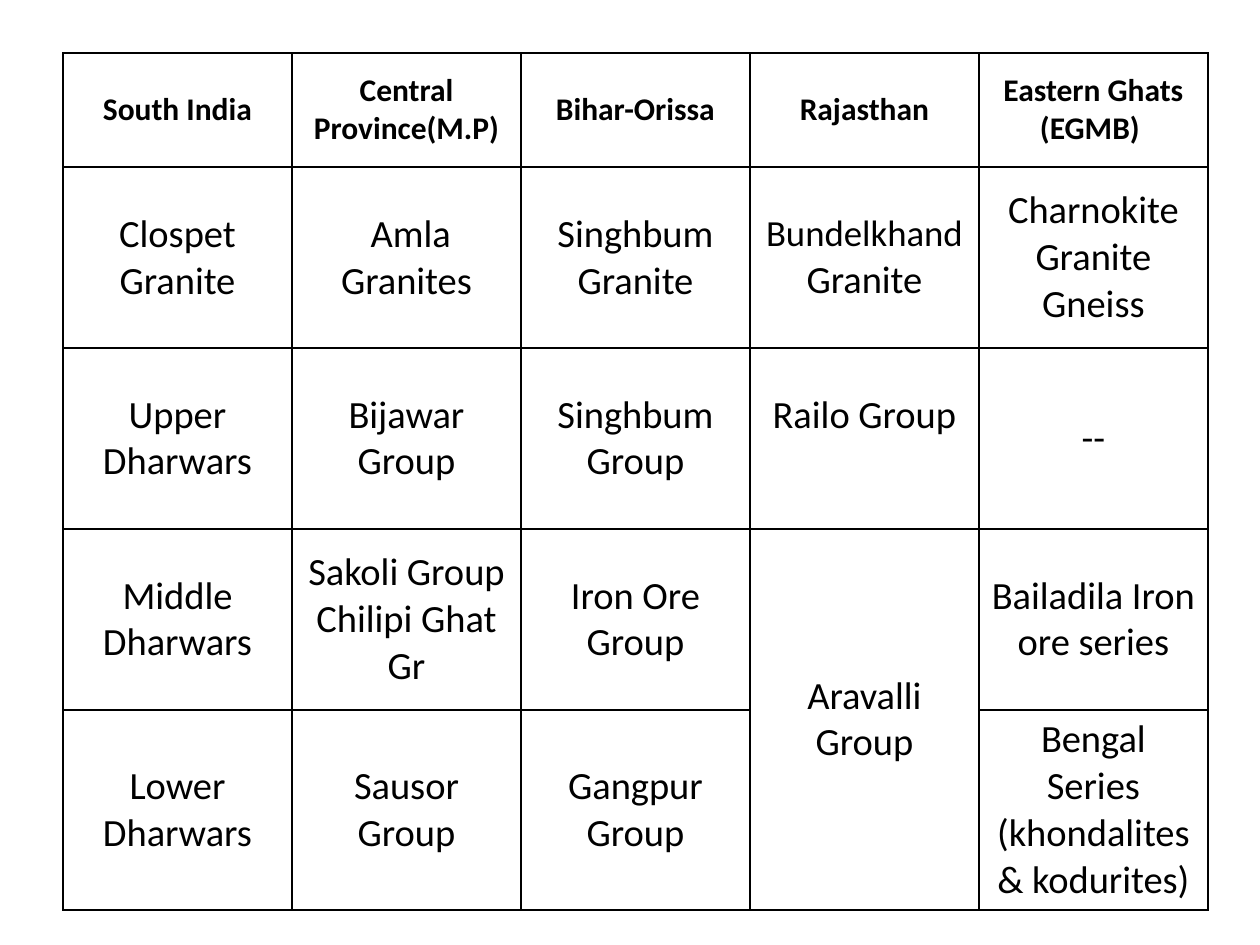
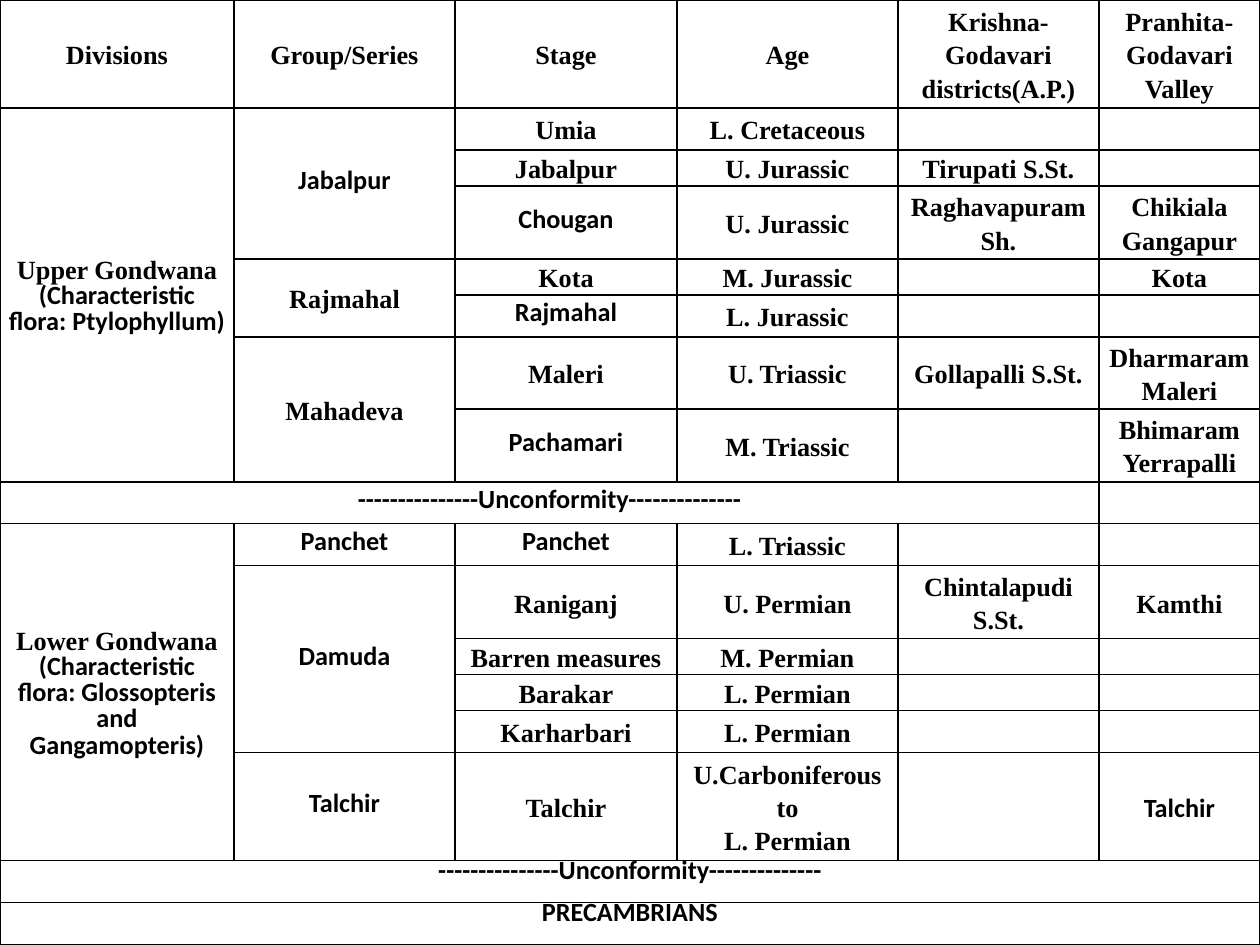
from dataclasses import dataclass
from typing import Optional, Union

from lxml.etree import SubElement
from pptx import Presentation
from pptx.dml.color import RGBColor
from pptx.enum.text import MSO_ANCHOR as Anchor, PP_ALIGN as Align
from pptx.oxml.ns import qn
from pptx.util import Pt

PX = 914400 / 126


@dataclass(frozen=True)
class Theme:
    ink: str = "000000"
    border_width: int = 12700
    sans: str = "Calibri"
    serif: str = "Times New Roman"
    header_size: int = 18
    body_size: int = 22
    tight_size: int = 21
    chart_size: int = 15
    loose: float = 1.15


THEME = Theme()


@dataclass(frozen=True)
class Style:
    font: str
    size: int
    bold: bool = True
    spacing: Union[float, Pt, None] = None


HEADER = Style(THEME.sans, THEME.header_size)
BODY = Style(THEME.sans, THEME.body_size, bold=False)
TIGHT = Style(THEME.sans, THEME.tight_size, bold=False)
SERIF = Style(THEME.serif, THEME.chart_size, spacing=THEME.loose)
SANS = Style(THEME.sans, THEME.chart_size, spacing=Pt(THEME.chart_size))
SANS_LOOSE = Style(THEME.sans, THEME.chart_size, spacing=THEME.loose)


@dataclass(frozen=True)
class Text:
    """One paragraph; lead is a differently styled run before it."""
    text: str
    style: Style
    lead: Optional["Text"] = None


Content = Union[None, str, Text, tuple]


@dataclass(frozen=True)
class Span:
    row: int
    column: int
    rows: int = 1
    columns: int = 1


@dataclass(frozen=True)
class Grid:
    left: int
    top: int
    widths: tuple
    heights: tuple
    rows: list
    spans: list
    style: Style
    header: Style
    insets: Optional[tuple] = None
    top_rows: tuple = ()


def px(length: int) -> int:
    return round(length * PX)


def apply(target, formats: dict) -> None:
    for name, value in formats.items():
        setattr(target, name, value)


def add_run(paragraph, text: str, style: Style) -> None:
    run = paragraph.add_run()
    run.text = text
    apply(run.font, {"name": style.font, "size": Pt(style.size), "bold": style.bold})
    run.font.color.rgb = RGBColor.from_string(THEME.ink)


def write_cell(cell, content: Content, style: Style) -> None:
    frame = cell.text_frame
    if not content:
        # An empty cell must not stretch a short row.
        end = frame.paragraphs[0]._p.get_or_add_endParaRPr()
        end.set("sz", str(style.size * 100))
        return
    lines = content if isinstance(content, tuple) else (content,)
    for index, line in enumerate(lines):
        item = line if isinstance(line, Text) else Text(line, style)
        paragraph = frame.add_paragraph() if index else frame.paragraphs[0]
        apply(paragraph, {"alignment": Align.CENTER, "line_spacing": item.style.spacing})
        if item.lead:
            add_run(paragraph, item.lead.text, item.lead.style)
        add_run(paragraph, item.text, item.style)


def draw_borders(cell) -> None:
    properties = cell._tc.get_or_add_tcPr()
    for position, side in enumerate(("lnL", "lnR", "lnT", "lnB")):
        line = SubElement(properties, qn(f"a:{side}"), w=str(THEME.border_width))
        fill = SubElement(line, qn("a:solidFill"))
        SubElement(fill, qn("a:srgbClr"), val=THEME.ink)
        properties.insert(position, line)


def add_grid(slide, grid: Grid):
    shape = slide.shapes.add_table(
        len(grid.heights), len(grid.widths), px(grid.left), px(grid.top),
        px(sum(grid.widths)), px(sum(grid.heights)))
    table = shape.table
    apply(table, {"first_row": False, "horz_banding": False})
    for column, width in zip(table.columns, grid.widths):
        column.width = px(width)
    for row, height in zip(table.rows, grid.heights):
        row.height = px(height)
    for span in grid.spans:
        last = table.cell(span.row + span.rows - 1, span.column + span.columns - 1)
        table.cell(span.row, span.column).merge(last)
    for row, contents in enumerate(grid.rows):
        for column, content in enumerate(contents):
            cell = table.cell(row, column)
            cell.fill.background()
            draw_borders(cell)
            cell.vertical_anchor = Anchor.TOP if row in grid.top_rows else Anchor.MIDDLE
            if grid.insets:
                side, end = map(px, grid.insets)
                apply(cell, {"margin_left": side, "margin_right": side,
                             "margin_top": end, "margin_bottom": end})
            write_cell(cell, content, grid.style if row else grid.header)
    return table


REGIONS = Grid(
    left=63, top=53, widths=(229,) * 5, heights=(114,) + (181,) * 4,
    style=BODY, header=HEADER,
    spans=[Span(3, 3, rows=2)],
    rows=[
        ["South India", "Central Province(M.P)", "Bihar-Orissa", "Rajasthan",
         ("Eastern Ghats", "(EGMB) ")],
        ["Clospet Granite", " Amla Granites", "Singhbum Granite",
         Text("Granite", BODY, lead=Text("Bundelkhand ", TIGHT)),
         "Charnokite Granite Gneiss"],
        ["Upper Dharwars", "Bijawar Group", "Singhbum Group", "Railo Group", "--"],
        ["Middle Dharwars", ("Sakoli Group", "Chilipi Ghat Gr"), "Iron Ore Group",
         "Aravalli Group", "Bailadila Iron ore series"],
        ["Lower Dharwars", "Sausor Group", "Gangpur Group", None,
         ("Bengal Series", "(khondalites & kodurites)")],
    ])

UNCONFORMITY = Text("---------------Unconformity--------------", SANS)

GONDWANA = Grid(
    left=0, top=0, widths=(234, 221, 222, 221, 201, 161),
    heights=(108, 42, 36, 73, 36, 42, 72, 73, 42, 42, 73, 36, 36, 42, 108, 42, 42),
    style=SERIF, header=SERIF, insets=(8, 0), top_rows=(15, 16),
    spans=[Span(1, 0, rows=7), Span(1, 1, rows=3), Span(4, 1, rows=2),
           Span(6, 1, rows=2), Span(8, 0, columns=5), Span(9, 0, rows=6),
           Span(10, 1, rows=4), Span(15, 0, columns=6), Span(16, 0, columns=6)],
    rows=[
        ["Divisions", "Group/Series", "Stage", "Age",
         "Krishna-Godavari districts(A.P.)", "Pranhita-Godavari Valley"],
        [("Upper Gondwana", Text("(Characteristic flora: Ptylophyllum)", SANS)),
         Text("Jabalpur", SANS), "Umia", "L. Cretaceous", None, None],
        [None, None, "Jabalpur", "U. Jurassic", "Tirupati S.St.", None],
        [None, None, Text("Chougan", SANS), "U. Jurassic", "Raghavapuram Sh.",
         ("Chikiala", "Gangapur")],
        [None, "Rajmahal", "Kota", "M. Jurassic", None, "Kota"],
        [None, None, Text("Rajmahal", SANS), "L. Jurassic", None, None],
        [None, "Mahadeva", "Maleri", "U. Triassic", "Gollapalli S.St.",
         ("Dharmaram", "Maleri")],
        [None, None, Text("Pachamari", SANS), "M. Triassic", None,
         ("Bhimaram", "Yerrapalli")],
        [UNCONFORMITY] + [None] * 5,
        [("Lower Gondwana",
          Text("(Characteristic flora: Glossopteris and Gangamopteris)", SANS)),
         Text("Panchet", SANS), Text("Panchet", SANS), "L. Triassic", None, None],
        [None, Text("Damuda", SANS), "Raniganj", "U. Permian", "Chintalapudi S.St.",
         "Kamthi"],
        [None, None, "Barren measures", "M. Permian", None, None],
        [None, None, "Barakar", "L. Permian", None, None],
        [None, None, "Karharbari", "L. Permian", None, None],
        [None, Text("Talchir", SANS), "Talchir", ("U.Carboniferous to", "L. Permian"),
         None, Text("Talchir", SANS_LOOSE)],
        [UNCONFORMITY] + [None] * 5,
        [Text("PRECAMBRIANS", SANS)] + [None] * 5,
    ])


def main() -> None:
    presentation = Presentation()
    apply(presentation, {"slide_width": px(1260), "slide_height": px(945)})
    blank = presentation.slide_layouts[6]
    regions = add_grid(presentation.slides.add_slide(blank), REGIONS)
    # The Railo Group sits one text line above the bottom of its block.
    regions.cell(2, 3).margin_bottom = px(53)
    add_grid(presentation.slides.add_slide(blank), GONDWANA)
    presentation.save("out.pptx")


if __name__ == "__main__":
    main()
